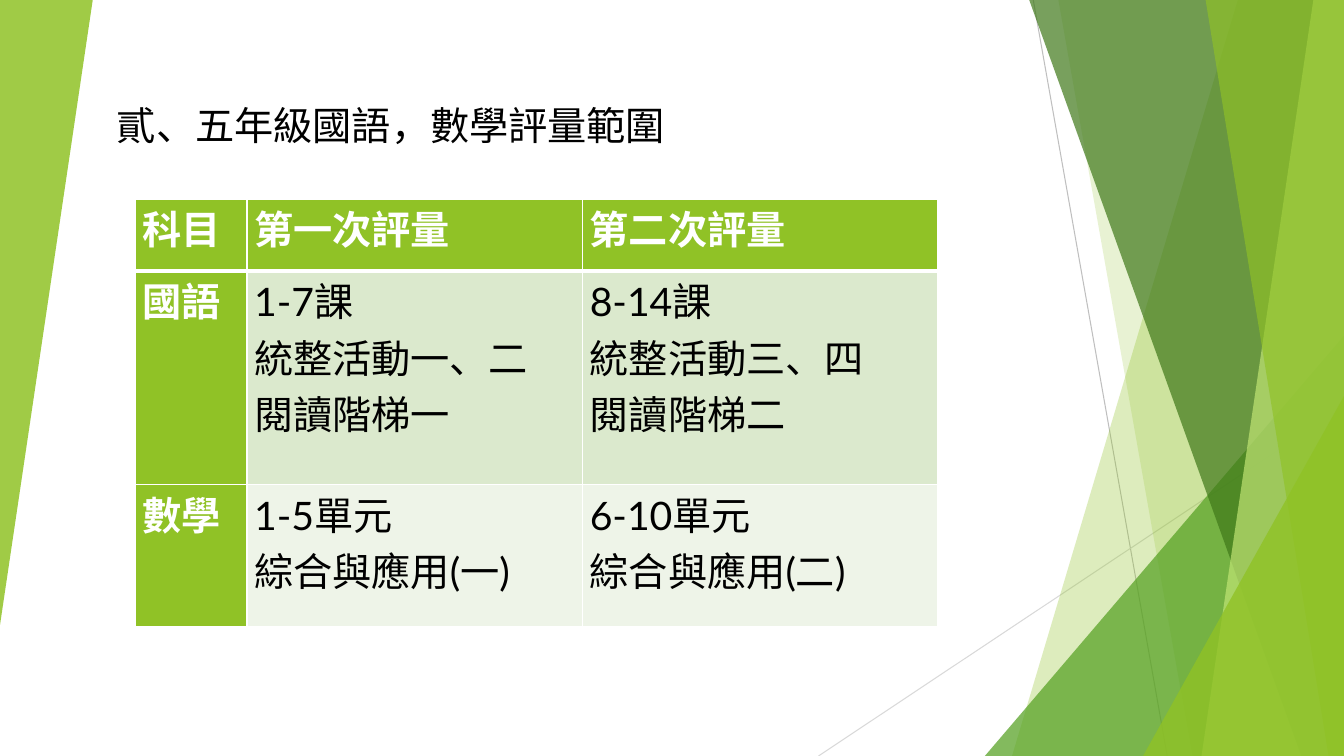
from dataclasses import dataclass

from lxml.etree import SubElement
from pptx import Presentation
from pptx.dml.color import RGBColor
from pptx.enum.shapes import MSO_CONNECTOR, MSO_SHAPE
from pptx.enum.text import MSO_ANCHOR, MSO_AUTO_SIZE, PP_ALIGN
from pptx.oxml.ns import qn
from pptx.util import Inches, Pt

WIDE, TALL = Inches(13.33), Inches(7.5)

LIME = RGBColor(0x90, 0xC2, 0x26)
GREEN = RGBColor(0x54, 0xA0, 0x21)
FOREST = RGBColor(0x3F, 0x78, 0x19)
PALE = RGBColor(0xC0, 0xE4, 0x74)
MINT = RGBColor(0xDB, 0xE9, 0xCD)
MIST = RGBColor(0xEE, 0xF4, 0xE8)
SILVER = RGBColor(0xBF, 0xBF, 0xBF)
CLOUD = RGBColor(0xD9, 0xD9, 0xD9)
WHITE = RGBColor(0xFF, 0xFF, 0xFF)
BLACK = RGBColor(0x00, 0x00, 0x00)

LATIN, HAN = "Lato", "Noto Sans CJK SC"


def across(share: float) -> int:
    """Length from a percentage of the slide's width."""
    return round(WIDE * share / 100)


def down(share: float) -> int:
    """Length from a percentage of the slide's height."""
    return round(TALL * share / 100)


@dataclass(frozen=True)
class Ray:
    x1: float
    y1: float
    x2: float
    y2: float
    color: RGBColor


@dataclass(frozen=True)
class Band:
    """Full-height area from a slanted left edge to the slide's right side."""
    top: float
    base: float
    color: RGBColor
    alpha: int


@dataclass(frozen=True)
class Peak:
    x: float
    y: float
    wide: float
    tall: float
    color: RGBColor
    alpha: int
    turn: int = 0


RAYS = [
    Ray(76.88, 0, 86.85, 100, SILVER),
    Ray(100, 53.73, 60.9, 100, CLOUD),
]
FACETS = [
    Band(92.1, 75.3, LIME, 30),
    Band(78.75, 88.72, LIME, 20),
    Peak(73.28, 44.4, 26.72, 55.6, GREEN, 72),
    Band(76.58, 96.82, FOREST, 70),
    Band(97.72, 89.4, PALE, 70),
    Band(89.7, 98.85, LIME, 65),
    Peak(85.05, 52.4, 14.95, 47.6, LIME, 80),
    Peak(0, 0, 6.9, 82.67, LIME, 85, turn=180),
]

COLS = [8.33, 24.98, 26.4]
ROWS = [9.47, 28.27, 18.8]
FILLS = [LIME, MINT, MIST]
CELLS = [
    ["科目", "第一次評量", "第二次評量"],
    ["國語", "1-7課\n統整活動一、二\n閱讀階梯一", "8-14課\n統整活動三、四\n閱讀階梯二"],
    ["數學", "1-5單元\n綜合與應用(一)", "6-10單元\n綜合與應用(二)"],
]


def write(frame, text: str, *, font: str = LATIN, size: int = 28,
          color: RGBColor = BLACK, bold: bool = False) -> None:
    frame.text = text
    for para in frame.paragraphs:
        para.alignment = PP_ALIGN.LEFT
        for run in para.runs:
            face = run.font
            face.name, face.size, face.bold = font, Pt(size), bold
            face.color.rgb = color
            SubElement(run._r.get_or_add_rPr(), qn("a:ea"), typeface=HAN)


def draw_ray(shapes, ray: Ray) -> None:
    line = shapes.add_connector(
        MSO_CONNECTOR.STRAIGHT, across(ray.x1), down(ray.y1),
        across(ray.x2), down(ray.y2))
    line.line.color.rgb = ray.color
    line.line.width = Pt(0.75)
    SubElement(line._element.spPr, qn("a:effectLst"))


def draw_facet(shapes, facet: Band | Peak) -> None:
    if isinstance(facet, Band):
        pen = shapes.build_freeform(across(facet.top), 0)
        pen.add_line_segments([(WIDE, 0), (WIDE, TALL),
                               (across(facet.base), TALL)], close=True)
        shape = pen.convert_to_shape()
    else:
        shape = shapes.add_shape(
            MSO_SHAPE.ISOSCELES_TRIANGLE, across(facet.x), down(facet.y),
            across(facet.wide), down(facet.tall))
        shape.adjustments[0] = 1
        shape.rotation = facet.turn
    shape.shadow.inherit = False
    shape.line.fill.background()
    shape.fill.solid()
    shape.fill.fore_color.rgb = facet.color
    tint = shape._element.spPr.find(qn("a:solidFill"))[0]
    SubElement(tint, qn("a:alpha"), val=str(facet.alpha * 1000))


def edge(cell, side: str, width: float) -> None:
    line = SubElement(cell._tc.get_or_add_tcPr(), qn(f"a:ln{side}"),
                      w=str(Pt(width)))
    fill = SubElement(line, qn("a:solidFill"))
    SubElement(fill, qn("a:srgbClr"), val=str(WHITE))


def draw_table(shapes) -> None:
    table = shapes.add_table(
        len(ROWS), len(COLS), across(10.05), down(26.4),
        across(sum(COLS)), down(sum(ROWS))).table
    for col, share in zip(table.columns, COLS):
        col.width = across(share)
    for r, (row, share) in enumerate(zip(table.rows, ROWS)):
        row.height = down(share)
        for c, cell in enumerate(row.cells):
            head = r == 0 or c == 0
            for side in "LRTB":
                thick = (r, side) in ((0, "B"), (1, "T"))
                edge(cell, side, 3 if thick else 1)
            cell.fill.solid()
            cell.fill.fore_color.rgb = LIME if head else FILLS[r]
            cell.margin_left = cell.margin_right = Inches(0.07)
            cell.margin_top = cell.margin_bottom = 0
            cell.vertical_anchor = MSO_ANCHOR.TOP
            write(cell.text_frame, CELLS[r][c],
                  color=WHITE if head else BLACK, bold=head)


def set_title(title) -> None:
    title.left, title.top = across(7.95), down(12.67)
    title.width, title.height = across(103.8), down(7.6)
    frame = title.text_frame
    frame.auto_size = MSO_AUTO_SIZE.NONE
    frame.vertical_anchor = MSO_ANCHOR.MIDDLE
    write(frame, "貳、五年級國語，數學評量範圍", font=HAN)


def main() -> None:
    deck = Presentation()
    deck.slide_width, deck.slide_height = WIDE, TALL
    shapes = deck.slides.add_slide(deck.slide_layouts[5]).shapes
    for ray in RAYS:
        draw_ray(shapes, ray)
    for facet in FACETS:
        draw_facet(shapes, facet)
    draw_table(shapes)
    set_title(shapes.title)
    deck.save("out.pptx")


if __name__ == "__main__":
    main()
